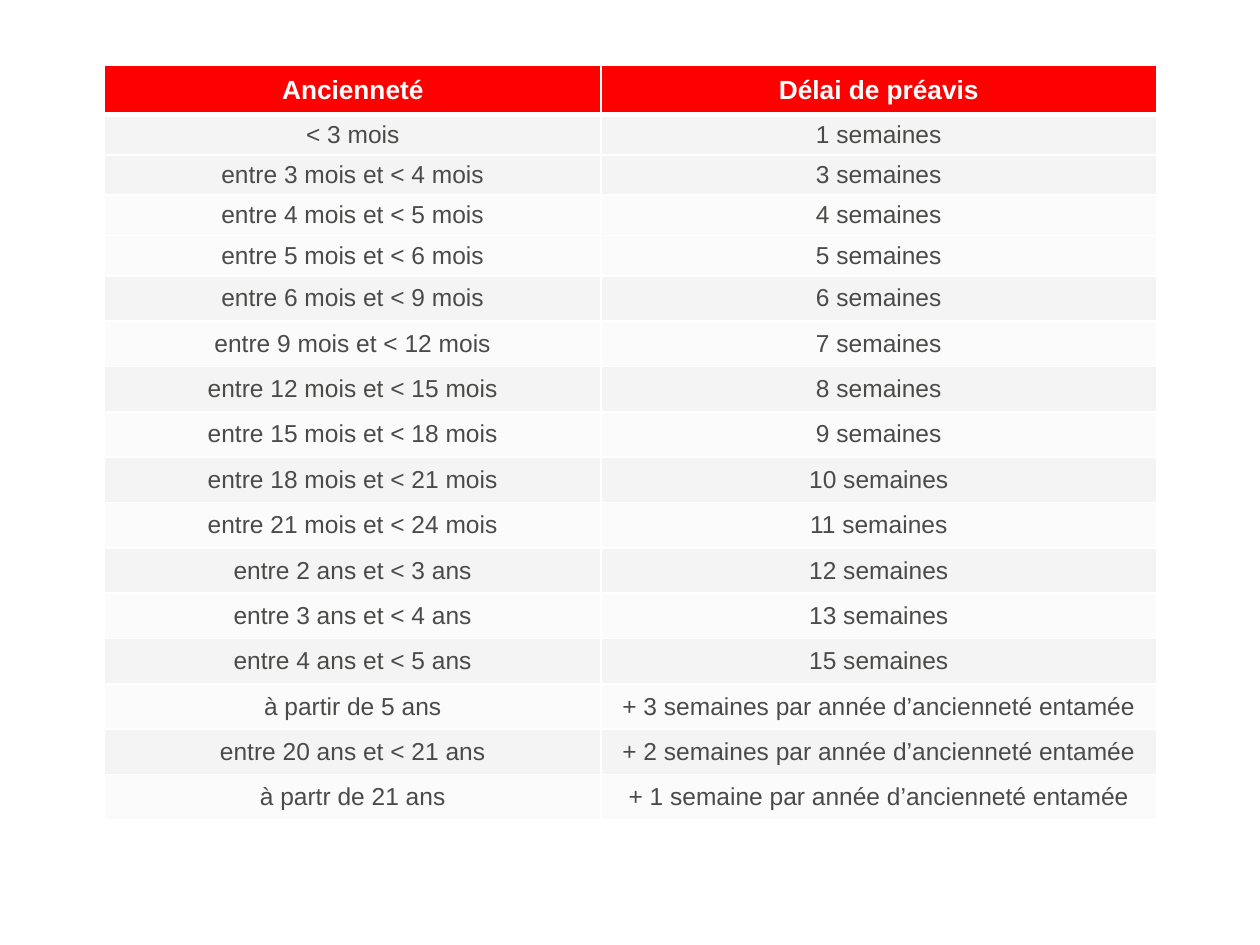
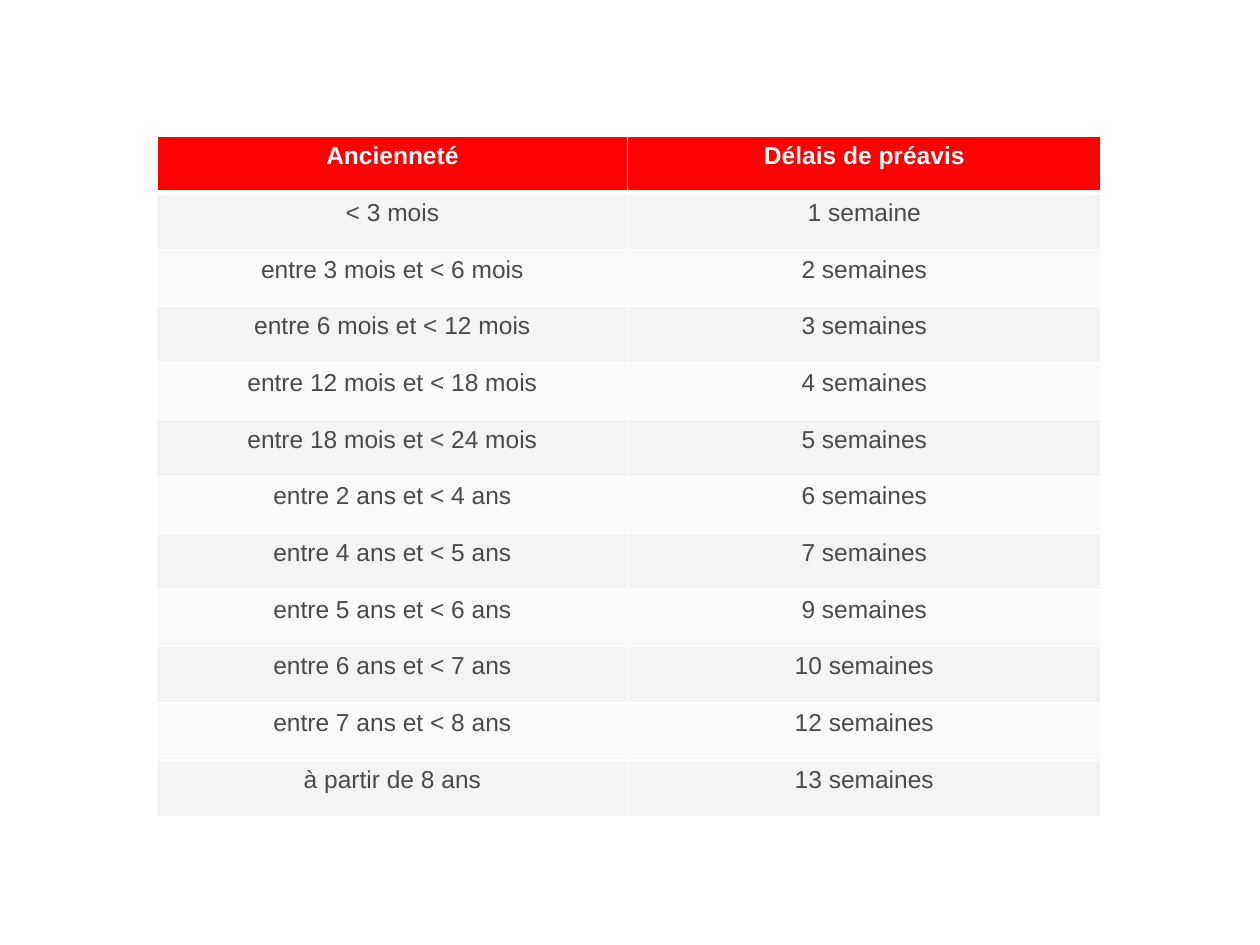
"""Build two slides of notice periods by seniority, one table each."""
from dataclasses import dataclass

from lxml import etree
from pptx import Presentation
from pptx.dml.color import RGBColor
from pptx.enum.text import MSO_ANCHOR, PP_ALIGN
from pptx.oxml.ns import qn
from pptx.util import Inches, Pt

CENTER = PP_ALIGN.CENTER
TOP, MIDDLE = MSO_ANCHOR.TOP, MSO_ANCHOR.MIDDLE
FONT = "Arial"
BODY_SIZE = 14
BLANK_LAYOUT = 6
THIN, THICK = 1, 3
COLORS = {
    "header": "FF0000",
    "header_text": "FFFFFF",
    "body_text": "4A4A49",
    "border": "FFFFFF",
}
BAND_FILLS = ("F4F4F4", "FBFBFB")


@dataclass(frozen=True)
class NoticeTable:
    """Content and layout of one table; paired rows share a band colour."""
    left: float
    top: float
    column_widths: tuple[float, float]
    header_height: float
    row_height: float
    headings: tuple[str, str]
    rows: tuple[tuple[str, str], ...]
    header_size: int = BODY_SIZE
    anchor: MSO_ANCHOR = TOP
    paired_rows: int = 0
    paired_height: float = 0.32

    def height_of(self, index: int) -> float:
        """Return the height of a body row in inches."""
        return self.paired_height if index < self.paired_rows else self.row_height

    def fill_of(self, index: int) -> str:
        """Return the band colour of a body row."""
        band = index // 2 if index < self.paired_rows else index - self.paired_rows // 2
        return BAND_FILLS[band % 2]


TABLES = (
    NoticeTable(
        left=0.83, top=0.52, column_widths=(3.94, 4.41),
        header_height=0.39, row_height=0.36,
        headings=("Ancienneté", "Délai de préavis"),
        header_size=15, anchor=MIDDLE, paired_rows=4,
        rows=(
            ("< 3 mois", "1 semaines"),
            ("entre 3 mois et < 4 mois", "3 semaines"),
            ("entre 4 mois et < 5 mois", "4 semaines"),
            ("entre 5 mois et < 6 mois", "5 semaines"),
            ("entre 6 mois et < 9 mois", "6 semaines"),
            ("entre 9 mois et < 12 mois", "7 semaines"),
            ("entre 12 mois et < 15 mois", "8 semaines"),
            ("entre 15 mois et < 18 mois", "9 semaines"),
            ("entre 18 mois et < 21 mois", "10 semaines"),
            ("entre 21 mois et < 24 mois", "11 semaines"),
            ("entre 2 ans et < 3 ans", "12 semaines"),
            ("entre 3 ans et < 4 ans", "13 semaines"),
            ("entre 4 ans et < 5 ans", "15 semaines"),
            ("à partir de 5 ans", "+ 3 semaines par année d’ancienneté entamée"),
            ("entre 20 ans et < 21 ans", "+ 2 semaines par année d’ancienneté entamée"),
            ("à partr de 21 ans", "+ 1 semaine par année d’ancienneté entamée"),
        ),
    ),
    NoticeTable(
        left=1.25, top=1.08, column_widths=(3.73, 3.76),
        header_height=0.45, row_height=0.45,
        headings=("Ancienneté", "Délais de préavis"),
        rows=(
            ("< 3 mois", "1 semaine"),
            ("entre 3 mois et < 6 mois", "2 semaines"),
            ("entre 6 mois et < 12 mois", "3 semaines"),
            ("entre 12 mois et < 18 mois", "4 semaines"),
            ("entre 18 mois et < 24 mois", "5 semaines"),
            ("entre 2 ans et < 4 ans", "6 semaines"),
            ("entre 4 ans et < 5 ans", "7 semaines"),
            ("entre 5 ans et < 6 ans", "9 semaines"),
            ("entre 6 ans et < 7 ans", "10 semaines"),
            ("entre 7 ans et < 8 ans", "12 semaines"),
            ("à partir de 8 ans", "13 semaines"),
        ),
    ),
)


def set_borders(cell, top: int = THIN, bottom: int = THIN) -> None:
    """Draw the four borders of a cell, with widths in points."""
    properties = cell._tc.get_or_add_tcPr()
    for side, width in (("L", THIN), ("R", THIN), ("T", top), ("B", bottom)):
        line = etree.SubElement(properties, qn(f"a:ln{side}"), w=str(Pt(width)))
        fill = etree.SubElement(line, qn("a:solidFill"))
        etree.SubElement(fill, qn("a:srgbClr"), val=COLORS["border"])


def write_text(cell, text: str, *, size: int, color: str, bold: bool = False) -> None:
    """Write one centred, formatted paragraph in a cell."""
    para = cell.text_frame.paragraphs[0]
    para.alignment = CENTER
    span = para.add_run()
    span.text = text
    span.font.name = FONT
    span.font.size = Pt(size)
    span.font.bold = bold
    span.font.color.rgb = RGBColor.from_string(color)


def fill_row(table, row: int, texts: tuple[str, str], *, height: float, fill: str,
             anchor: MSO_ANCHOR, top: int = THIN, bottom: int = THIN, **text_format) -> None:
    """Set the height, borders, fill and text of one table row."""
    table.rows[row].height = Inches(height)
    for column, text in enumerate(texts):
        cell = table.cell(row, column)
        set_borders(cell, top, bottom)
        cell.fill.solid()
        cell.fill.fore_color.rgb = RGBColor.from_string(fill)
        cell.vertical_anchor = anchor
        write_text(cell, text, **text_format)


def draw_table(page, notice: NoticeTable) -> None:
    """Add a notice table to a slide."""
    heights = [notice.height_of(index) for index in range(len(notice.rows))]
    table = page.shapes.add_table(
        len(notice.rows) + 1, len(notice.headings),
        Inches(notice.left), Inches(notice.top),
        Inches(sum(notice.column_widths)), Inches(notice.header_height + sum(heights)),
    ).table
    table.horz_banding = False
    for column, width in zip(table.columns, notice.column_widths):
        column.width = Inches(width)
    fill_row(table, 0, notice.headings, height=notice.header_height,
             fill=COLORS["header"], anchor=notice.anchor, bottom=THICK,
             size=notice.header_size, color=COLORS["header_text"], bold=True)
    for index, texts in enumerate(notice.rows):
        fill_row(table, index + 1, texts, height=heights[index],
                 fill=notice.fill_of(index), anchor=notice.anchor,
                 top=THIN if index else THICK,
                 size=BODY_SIZE, color=COLORS["body_text"])


def main() -> None:
    """Build and save the deck."""
    deck = Presentation()
    deck.slide_width, deck.slide_height = Inches(10), Inches(7.5)
    for notice in TABLES:
        draw_table(deck.slides.add_slide(deck.slide_layouts[BLANK_LAYOUT]), notice)
    deck.save("out.pptx")


if __name__ == "__main__":
    main()
